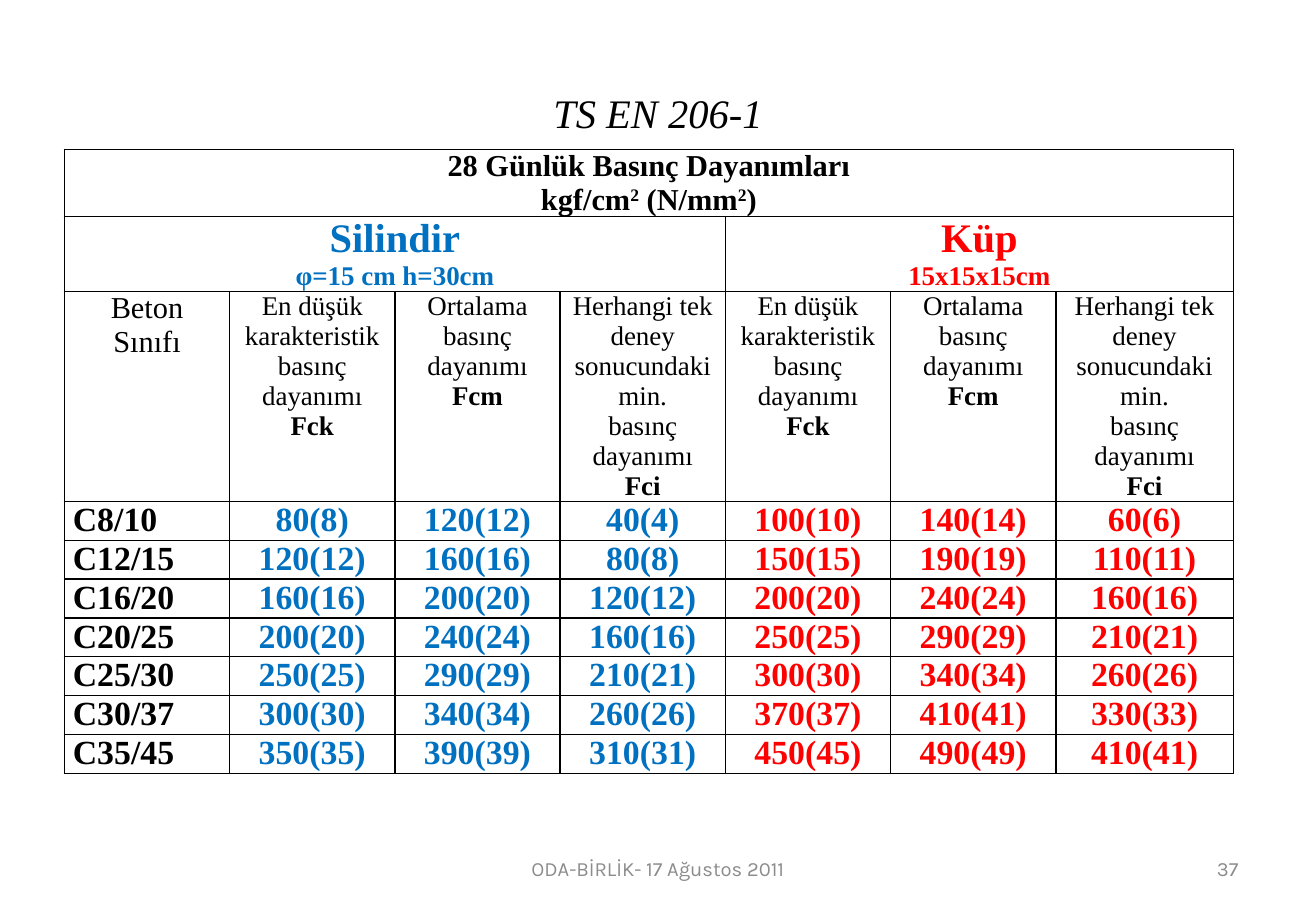
from lxml import etree
from pptx import Presentation
from pptx.dml.color import RGBColor
from pptx.enum.text import MSO_ANCHOR, PP_ALIGN
from pptx.oxml.ns import qn
from pptx.util import Inches, Pt

LEFT, MID, RIGHT = PP_ALIGN.LEFT, PP_ALIGN.CENTER, PP_ALIGN.RIGHT
CENTRE = MSO_ANCHOR.MIDDLE
BLACK, BLUE, RED, GREY = "000000", "0070C0", "FF0000", "8C8C8C"
SERIF, SANS = "Times New Roman", "Karla"

TITLE = "TS EN 206-1"
# "^" marks the start and the end of a superscript
HEAD = ["28 Günlük Basınç Dayanımları", "kgf/cm^2^ (N/mm^2^)"]
FCK = ["En düşük karakteristik", "basınç", "dayanımı", "Fck"]
FCM = ["Ortalama", "basınç", "dayanımı", "Fcm"]
FCI = ["basınç dayanımı", "Fci"]
GROUPS = [
    dict(name="Silindir", size="φ=15 cm h=30cm", color=BLUE, col=1,
         heads=[FCK, FCM, ["Herhangi tek deney sonucundaki min."] + FCI]),
    dict(name="Küp", size="15x15x15cm", color=RED, col=4,
         heads=[FCK, FCM, ["Herhangi tek deney sonucundaki", "min."] + FCI]),
]
# Strength of cylinder and cube in N/mm²; Fck, Fcm and Fci differ by STEPS
CLASSES = [(8, 10), (12, 15), (16, 20), (20, 25), (25, 30), (30, 37), (35, 45)]
STEPS = (0, 4, -4)
FOOTERS = [("ODA-BİRLİK- 17 Ağustos 2011", 3.7, 3.43, MID),
           ("37", 7.76, 2.53, RIGHT)]
WIDTHS = [1.36] * 6 + [1.46]
HEIGHTS = [0.51, 0.51, 1.54] + [0.32] * len(CLASSES)


def rgb(code):
    return RGBColor.from_string(code)


def write(frame, text, size=18, color=BLACK, font=SERIF, bold=False,
          italic=False, align=MID, new=False):
    """Write one paragraph; new adds it below the text already there."""
    para = frame.add_paragraph() if new else frame.paragraphs[0]
    para.alignment = align
    for i, part in enumerate(text.split("^")):
        run = para.add_run()
        run.text = part
        run.font.size, run.font.name = Pt(size), font
        run.font.bold, run.font.italic = bold, italic
        run.font.color.rgb = rgb(color)
        if i % 2:
            run.font._element.set("baseline", "30000")


def style(cell):
    """Give a cell its margins, no fill and thin black borders."""
    cell.margin_left = cell.margin_right = Inches(0.07)
    cell.margin_top = cell.margin_bottom = 0
    cell.fill.background()
    props = cell._tc.get_or_add_tcPr()
    for i, side in enumerate(("a:lnL", "a:lnR", "a:lnT", "a:lnB")):
        line = etree.Element(qn(side), w=str(Pt(1)))
        fill = etree.SubElement(line, qn("a:solidFill"))
        etree.SubElement(fill, qn("a:srgbClr"), val=BLACK)
        props.insert(i, line)


def fill_table(table):
    for col, width in zip(table.columns, WIDTHS):
        col.width = Inches(width)
    for row, height in zip(table.rows, HEIGHTS):
        row.height = Inches(height)
    for cell in table.iter_cells():
        style(cell)
    table.cell(0, 0).merge(table.cell(0, 6))
    table.cell(1, 0).merge(table.cell(1, 3))
    table.cell(1, 4).merge(table.cell(1, 6))

    def put(row, col, text, **form):
        write(table.cell(row, col).text_frame, text, **form)

    for i, text in enumerate(HEAD):
        put(0, 0, text, bold=True, new=i > 0)
    for i, text in enumerate(("Beton", "Sınıfı")):
        put(2, 0, text, new=i > 0)
    for row, pair in enumerate(CLASSES, 3):
        put(row, 0, f"C{pair[0]}/{pair[1]}", size=20, bold=True, align=LEFT)

    for k, group in enumerate(GROUPS):
        first, color = group["col"], group["color"]
        start = 4 * k
        put(1, start, group["name"], size=24, color=color, bold=True)
        put(1, start, group["size"], size=16, color=color, bold=True, new=True)
        for j, (lines, step) in enumerate(zip(group["heads"], STEPS)):
            for i, text in enumerate(lines):
                put(2, first + j, text, size=16, bold=text == lines[-1],
                    new=i > 0)
            for row, pair in enumerate(CLASSES, 3):
                value = pair[k] + step
                put(row, first + j, f"{10 * value}({value})", size=20,
                    color=color, bold=True)


def main():
    deck = Presentation()
    deck.slide_width, deck.slide_height = Inches(10.83), Inches(7.5)
    slide = deck.slides.add_slide(deck.slide_layouts[5])

    title = slide.shapes.title
    title.left, title.top = Inches(0.54), Inches(0.3)
    title.width, title.height = Inches(9.75), Inches(1.25)
    title.text_frame.vertical_anchor = CENTRE
    write(title.text_frame, TITLE, size=24, italic=True)

    frame = slide.shapes.add_table(
        len(HEIGHTS), len(WIDTHS), Inches(0.53), Inches(1.23),
        Inches(sum(WIDTHS)), Inches(sum(HEIGHTS)))
    frame.table.first_row = frame.table.horz_banding = False
    fill_table(frame.table)

    for text, left, width, align in FOOTERS:
        box = slide.shapes.add_textbox(
            Inches(left), Inches(6.95), Inches(width), Inches(0.4))
        box.text_frame.word_wrap = True
        box.text_frame.vertical_anchor = CENTRE
        write(box.text_frame, text, size=12, color=GREY, font=SANS, align=align)

    deck.save("out.pptx")


if __name__ == "__main__":
    main()
